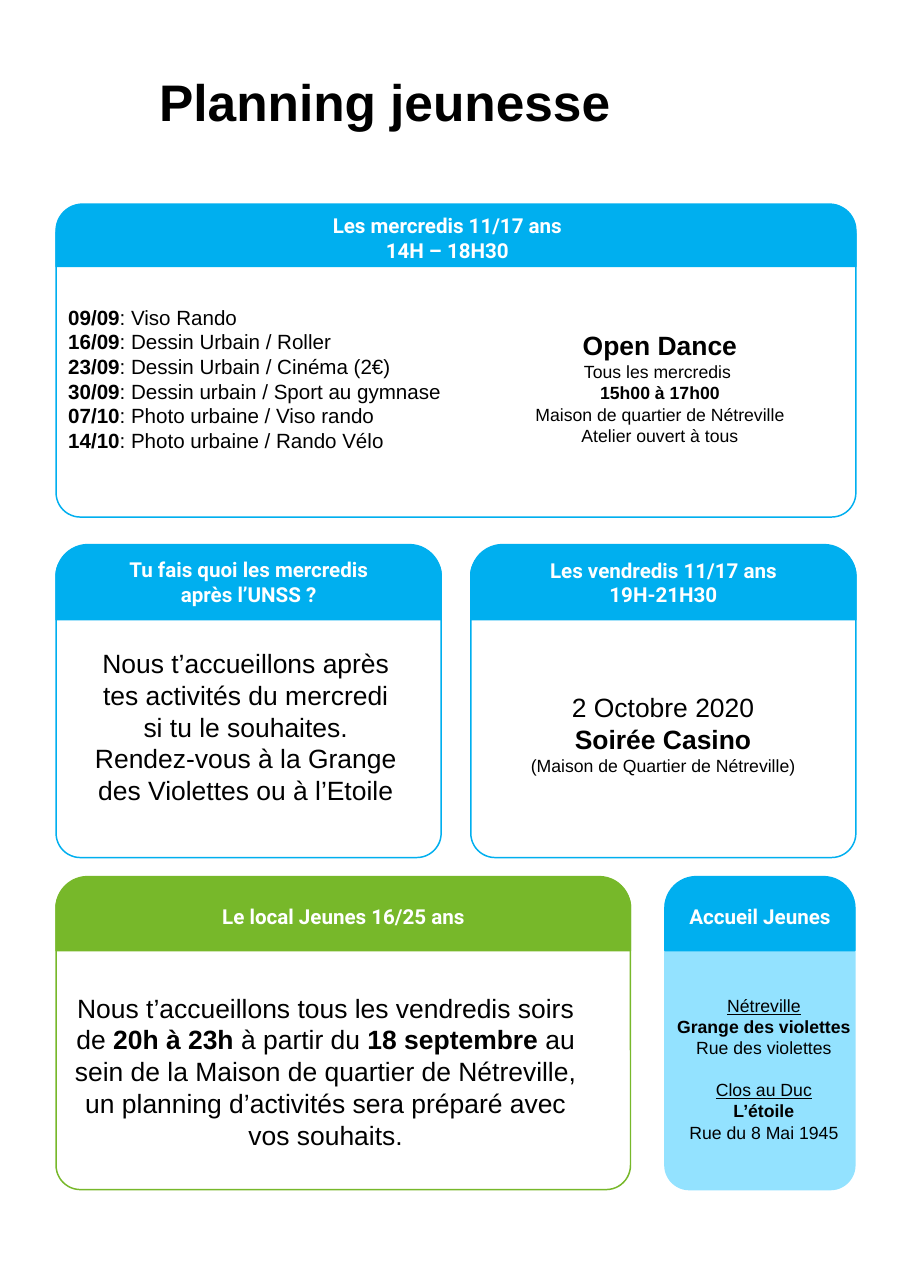
from pptx import Presentation
from pptx.dml.color import RGBColor
from pptx.enum.shapes import MSO_SHAPE
from pptx.enum.text import MSO_ANCHOR, MSO_AUTO_SIZE, PP_ALIGN
from pptx.util import Inches, Pt

# Content: a paragraph is (size, runs), a run is (text, style) with b = bold, u = underlined
TITLE = "Planning jeunesse"
WORKSHOPS = [
    ("09/09", "Viso Rando"),
    ("16/09", "Dessin Urbain / Roller"),
    ("23/09", "Dessin Urbain / Cinéma (2€)"),
    ("30/09", "Dessin urbain / Sport au gymnase"),
    ("07/10", "Photo urbaine / Viso rando"),
    ("14/10", "Photo urbaine / Rando Vélo"),
]
WORKSHOP_LIST = [(28, [(date, "b"), (f": {name}", "")]) for date, name in WORKSHOPS]
OPEN_DANCE = [
    (36, [("Open Dance", "b")]),
    (24, [("Tous les mercredis ", "")]),
    (24, [("15h00 à 17h00", "b")]),
    (24, [("Maison de quartier de Nétreville", "")]),
    (24, [("Atelier ouvert à tous", "")]),
]
AFTER_SPORT = [(36, [(
    "Nous t’accueillons après tes activités du mercredi si tu le souhaites. "
    "Rendez-vous à la Grange des Violettes ou à l’Etoile", "")])]
CASINO = [
    (36, [("2 Octobre 2020", "")]),
    (36, [("Soirée Casino", "b")]),
    (24, [("(Maison de Quartier de Nétreville)", "")]),
]
YOUTH_CLUB = [(36, [
    ("Nous t’accueillons tous les vendredis soirs de ", ""),
    ("20h à 23h ", "b"),
    ("à partir du ", ""),
    ("18 septembre ", "b"),
    ("au sein de la Maison de quartier de Nétreville, un planning "
     "d’activités sera préparé avec vos souhaits.", ""),
])]
PLACES = [
    [("Nétreville", "u"), ("Grange des violettes", "b"), ("Rue des violettes", "")],
    [("Clos au Duc", "u"), ("L’étoile", "b"), ("Rue du 8 Mai 1945", "")],
]
ADDRESSES = [(24, [run]) for place in PLACES for run in place]

COLORS = {"blue": "00AFEF", "green": "77B82A", "sky": "93E2FF",
          "white": "FFFFFF", "black": "000000"}

# Slide size in points, A4 proportions
SLIDE_WIDTH, SLIDE_HEIGHT = 1240, 1754

# Grid, in inches
MARGIN, FULL_WIDTH, GAP = 1.06, 15.12, 0.56
HALF_WIDTH = (FULL_WIDTH - GAP) / 2
RIGHT_HALF = MARGIN + HALF_WIDTH + GAP
CLUB_WIDTH, WELCOME_LEFT, WELCOME_WIDTH = 10.86, 12.57, 3.59
ROWS = [3.86, 10.3, 16.58]
BODY_OFFSET, BODY_HEIGHT = 0.12, 5.8
BODY_RADIUS, HEADER_ROUNDING = 0.46, 0.425
LINE_FACTOR = 1.2

# Cards: left, top, width, header height, header colour, body fill, body line
CARDS = [
    (MARGIN, ROWS[0], FULL_WIDTH, 1.18, "blue", "white", "blue"),
    (MARGIN, ROWS[1], HALF_WIDTH, 1.42, "blue", "white", "blue"),
    (RIGHT_HALF, ROWS[1], HALF_WIDTH, 1.42, "blue", "white", "blue"),
    (MARGIN, ROWS[2], CLUB_WIDTH, 1.4, "green", "white", "green"),
    (WELCOME_LEFT, ROWS[2], WELCOME_WIDTH, 1.4, "blue", "sky", "sky"),
]
# Headings: left, top, width, height, lines
HEADINGS = [
    (2.65, 3.99, 11.61, 1.01, ["Les mercredis 11/17 ans", "14H – 18H30"]),
    (MARGIN, 10.5, HALF_WIDTH, 1.01, ["Tu fais quoi les mercredis", "après l’UNSS ?"]),
    (RIGHT_HALF, 10.51, HALF_WIDTH, 1.01, ["Les vendredis 11/17 ans", "19H-21H30"]),
    (MARGIN, 17.06, CLUB_WIDTH, 0.54, ["Le local Jeunes 16/25 ans"]),
    (WELCOME_LEFT, 17.06, WELCOME_WIDTH, 0.54, ["Accueil Jeunes"]),
]
# Texts: left, top, width, height, paragraphs, alignment
TEXTS = [
    (1.29, 5.76, 8.7, 2.8, WORKSHOP_LIST, PP_ALIGN.LEFT),
    (10.05, 6.23, 4.85, 2.2, OPEN_DANCE, PP_ALIGN.CENTER),
    (1.73, 12.24, 5.83, 3, AFTER_SPORT, PP_ALIGN.CENTER),
    (9.15, 13.07, 6.77, 1.6, CASINO, PP_ALIGN.CENTER),
    (1.29, 18.76, 9.73, 3, YOUTH_CLUB, PP_ALIGN.CENTER),
    (12.73, 18.81, 3.42, 2.8, ADDRESSES, PP_ALIGN.CENTER),
]


def color(name):
    return RGBColor.from_string(COLORS[name])


def add_panel(slide, kind, box, rounding, fill, line):
    shape = slide.shapes.add_shape(kind, *map(Inches, box))
    shape.adjustments[0] = rounding
    shape.shadow.inherit = False
    shape.fill.solid()
    shape.fill.fore_color.rgb = color(fill)
    shape.line.color.rgb = color(line)
    shape.line.width = Pt(2)


def add_card(slide, left, top, width, header_height, header, fill, line):
    body = (left, top + BODY_OFFSET, width, BODY_HEIGHT)
    add_panel(slide, MSO_SHAPE.ROUNDED_RECTANGLE, body,
              BODY_RADIUS / min(width, BODY_HEIGHT), fill, line)
    add_panel(slide, MSO_SHAPE.ROUND_2_SAME_RECTANGLE, (left, top, width, header_height),
              HEADER_ROUNDING, header, header)


def format_paragraph(paragraph, size, font, font_color, alignment):
    paragraph.alignment = alignment
    paragraph.line_spacing = Pt(size * LINE_FACTOR)
    paragraph.font.size = Pt(size)
    paragraph.font.name = font
    paragraph.font.color.rgb = color(font_color)


def add_text(slide, box, paragraphs, alignment, font="Arial", font_color="black"):
    frame = slide.shapes.add_textbox(*map(Inches, box)).text_frame
    frame.word_wrap = True
    frame.vertical_anchor = MSO_ANCHOR.MIDDLE
    frame.margin_left = frame.margin_right = frame.margin_top = frame.margin_bottom = 0
    for index, (size, runs) in enumerate(paragraphs):
        paragraph = frame.add_paragraph() if index else frame.paragraphs[0]
        format_paragraph(paragraph, size, font, font_color, alignment)
        for text, style in runs:
            run = paragraph.add_run()
            run.text = text
            if style == "b":
                run.font.bold = True
            elif style == "u":
                run.font.underline = True
                # An underlined district opens a new group
                if index:
                    paragraph.space_before = Pt(size * LINE_FACTOR)


def add_title(slide):
    title = slide.shapes.title
    title.left, title.top, title.width, title.height = map(Inches, (2.91, 1.28, 14, 1.61))
    frame = title.text_frame
    frame.text = TITLE
    frame.auto_size = MSO_AUTO_SIZE.NONE
    frame.vertical_anchor = MSO_ANCHOR.TOP
    format_paragraph(frame.paragraphs[0], 70, "Arial", "black", PP_ALIGN.LEFT)
    frame.paragraphs[0].font.bold = True


def main():
    presentation = Presentation()
    presentation.slide_width = Pt(SLIDE_WIDTH)
    presentation.slide_height = Pt(SLIDE_HEIGHT)
    slide = presentation.slides.add_slide(presentation.slide_layouts[5])
    add_title(slide)
    for card in CARDS:
        add_card(slide, *card)
    for *box, lines in HEADINGS:
        paragraphs = [(28, [(line, "b")]) for line in lines]
        add_text(slide, box, paragraphs, PP_ALIGN.CENTER, "Roboto", "white")
    for *box, paragraphs, alignment in TEXTS:
        add_text(slide, box, paragraphs, alignment)
    presentation.save("out.pptx")


if __name__ == "__main__":
    main()
